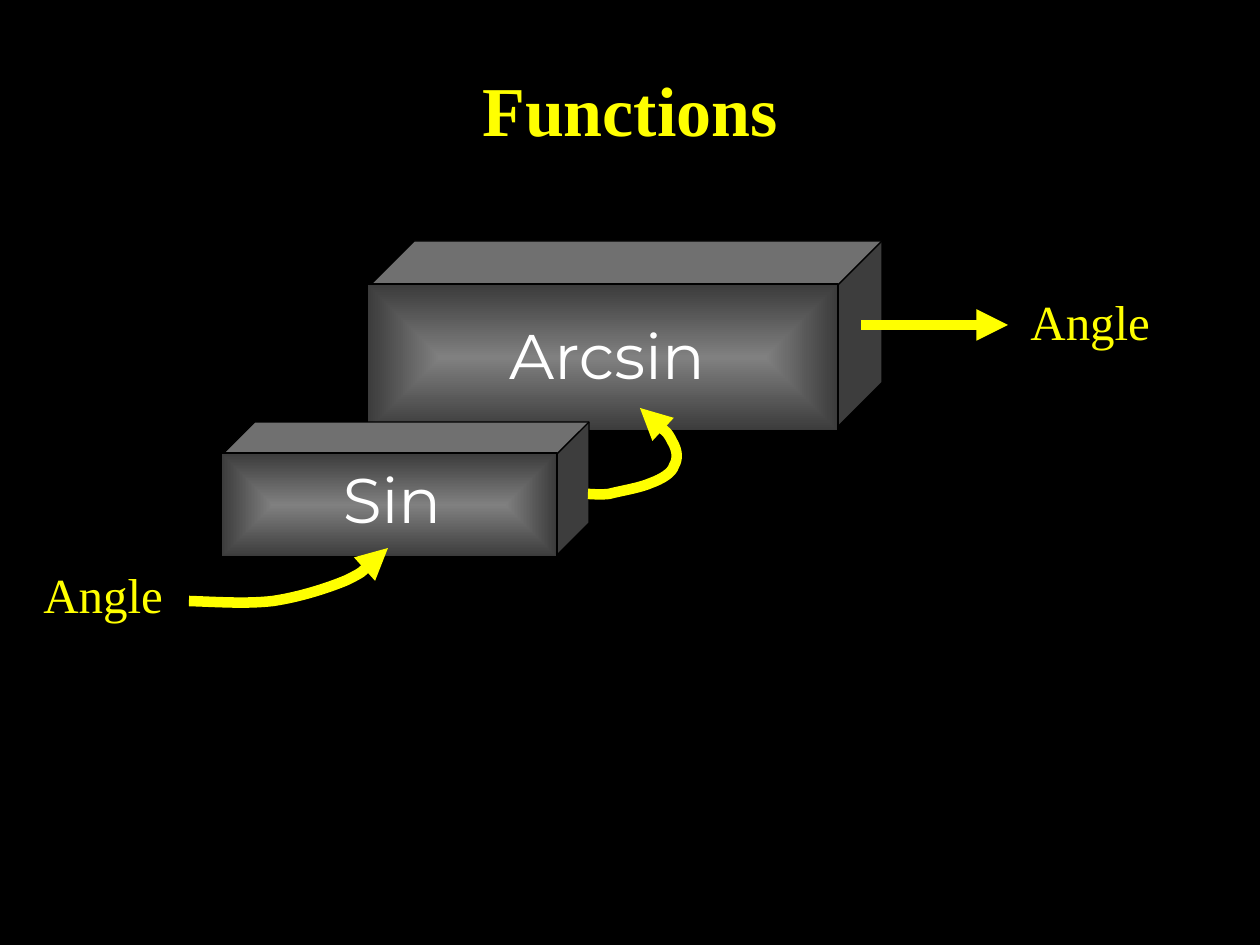
from lxml.etree import SubElement
from pptx import Presentation
from pptx.dml.color import RGBColor
from pptx.enum.shapes import MSO_CONNECTOR, MSO_SHAPE
from pptx.enum.text import MSO_ANCHOR, PP_ALIGN
from pptx.oxml import parse_xml
from pptx.oxml.ns import nsdecls, qn
from pptx.util import Emu, Pt

SCALE = 914400 / 126
BLACK = RGBColor(0x00, 0x00, 0x00)
WHITE = RGBColor(0xFF, 0xFF, 0xFF)
YELLOW = RGBColor(0xFF, 0xFF, 0x00)
CUBE_GRAY = RGBColor(0x4D, 0x4D, 0x4D)
GLOW_GRAY = RGBColor(0x80, 0x80, 0x80)
EDGE_GRAY = RGBColor(0x3B, 0x3B, 0x3B)
SERIF = "Times New Roman"
SANS = "Montserrat"


def px(*lengths):
    return [Emu(round(length * SCALE)) for length in lengths]


def write(frame, wording, size, font_name, color, align=PP_ALIGN.LEFT, bold=False):
    frame.word_wrap = True
    frame.vertical_anchor = MSO_ANCHOR.TOP
    frame.text = wording
    paragraph = frame.paragraphs[0]
    paragraph.alignment = align
    font = paragraph.font
    font.name, font.size, font.bold = font_name, Pt(size), bold
    font.color.rgb = color


def add_title(slide, wording, box):
    title = slide.shapes.title
    title.left, title.top, title.width, title.height = px(*box)
    write(title.text_frame, wording, 40, SERIF, YELLOW, PP_ALIGN.CENTER, True)


def add_label(slide, wording, box):
    label = slide.shapes.add_textbox(*px(*box))
    write(label.text_frame, wording, 28, SERIF, YELLOW)


def add_block(shapes, preset, box):
    block = shapes.add_shape(preset, *px(*box))
    block.shadow.inherit = False
    block.fill.solid()
    block.fill.fore_color.rgb = CUBE_GRAY
    block.line.color.rgb = BLACK
    block.line.width = Pt(0.75)
    return block


def glow_from_center(front):
    properties = front._element.spPr
    properties.replace(properties.find(qn("a:solidFill")), parse_xml(
        f'<a:gradFill {nsdecls("a")} rotWithShape="1"><a:gsLst>'
        f'<a:gs pos="0"><a:srgbClr val="{GLOW_GRAY}"/></a:gs>'
        f'<a:gs pos="100000"><a:srgbClr val="{EDGE_GRAY}"/></a:gs></a:gsLst>'
        '<a:path path="rect"><a:fillToRect l="50000" t="50000" r="50000" b="50000"/>'
        '</a:path></a:gradFill>'))


def add_machine(slide, wording, cube_box, front_box, caption_box):
    machine = slide.shapes.add_group_shape().shapes
    add_block(machine, MSO_SHAPE.CUBE, cube_box)
    glow_from_center(add_block(machine, MSO_SHAPE.RECTANGLE, front_box))
    caption = machine.add_textbox(*px(*caption_box))
    write(caption.text_frame, wording, 36, SANS, WHITE, PP_ALIGN.CENTER)


def style_arrow(arrow):
    arrow.line.color.rgb = YELLOW
    arrow.line.width = Pt(6)
    SubElement(arrow.line._get_or_add_ln(), qn("a:tailEnd"), type="triangle")


def add_straight_arrow(slide, start, end):
    arrow = slide.shapes.add_connector(MSO_CONNECTOR.STRAIGHT, *px(*start, *end))
    style_arrow(arrow)
    SubElement(arrow._element.spPr, qn("a:effectLst"))


def add_curved_arrow(slide, start, *controls):
    builder = slide.shapes.build_freeform(*start, scale=SCALE)
    builder.add_line_segments(controls, close=False)
    arrow = builder.convert_to_shape()
    arrow.shadow.inherit = False
    arrow.fill.background()
    style_arrow(arrow)
    outline = next(arrow._element.iter(qn("a:path")))
    segments = outline.findall(qn("a:lnTo"))
    for first in range(0, len(segments), 3):
        curve = SubElement(outline, qn("a:cubicBezTo"))
        for segment in segments[first:first + 3]:
            curve.append(segment[0])
            outline.remove(segment)


def main():
    deck = Presentation()
    deck.slide_width, deck.slide_height = px(1260, 945)
    slide = deck.slides.add_slide(deck.slide_layouts[5])
    slide.background.fill.solid()
    slide.background.fill.fore_color.rgb = BLACK

    add_title(slide, "Functions", (0, 60, 1260, 97))
    add_machine(slide, "Arcsin", (367, 241, 515, 189), (367, 284, 471, 147),
                (423, 310, 368, 88))
    add_machine(slide, "Sin", (221, 422, 368, 135), (221, 453, 336, 104),
                (261, 454, 262, 88))
    add_label(slide, "Angle", (31, 558, 221, 72))
    add_label(slide, "Angle", (1018, 285, 168, 72))

    add_straight_arrow(slide, (861, 325), (1008, 325))
    add_curved_arrow(slide, (189, 601), (218, 602), (247, 604), (273, 601),
                     (300, 597), (328, 588), (347, 580),
                     (365, 571), (377, 559), (388, 548))
    add_curved_arrow(slide, (588, 494), (593, 494), (598, 495), (609, 494),
                     (620, 491), (640, 488), (651, 483),
                     (662, 479), (672, 473), (674, 466),
                     (678, 459), (678, 451), (672, 441),
                     (667, 431), (648, 415), (640, 408))
    deck.save("out.pptx")


if __name__ == "__main__":
    main()
